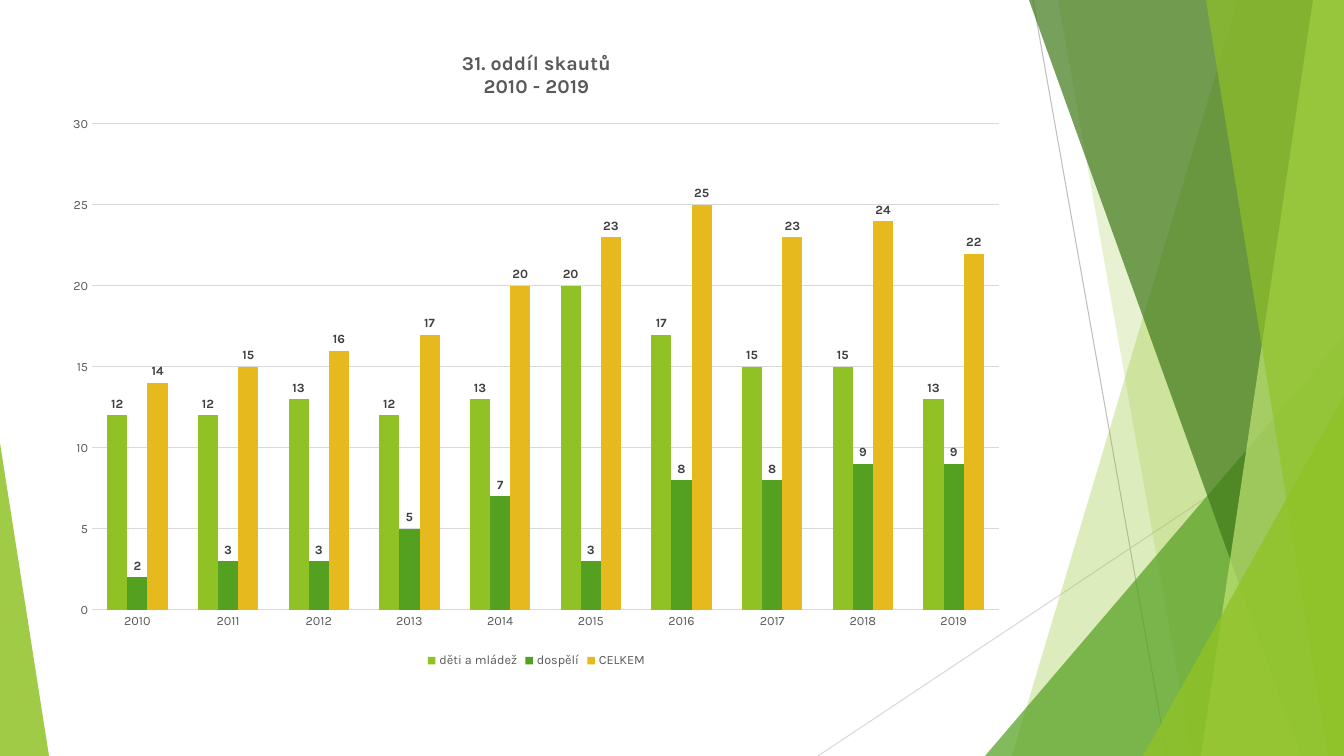
from dataclasses import dataclass

from lxml import etree
from pptx import Presentation
from pptx.chart.data import CategoryChartData
from pptx.dml.color import RGBColor
from pptx.enum.chart import (XL_CHART_TYPE, XL_LABEL_POSITION,
                             XL_LEGEND_POSITION, XL_TICK_MARK)
from pptx.enum.shapes import MSO_CONNECTOR, MSO_SHAPE
from pptx.oxml import parse_xml
from pptx.oxml.ns import qn
from pptx.util import Pt

COLUMNS = XL_CHART_TYPE.COLUMN_CLUSTERED
OUTSIDE = XL_LABEL_POSITION.OUTSIDE_END
BOTTOM = XL_LEGEND_POSITION.BOTTOM
NO_TICK = XL_TICK_MARK.NONE
STRAIGHT = MSO_CONNECTOR.STRAIGHT
TRIANGLE = MSO_SHAPE.ISOSCELES_TRIANGLE
CHART_NS = "http://schemas.openxmlformats.org/drawingml/2006/chart"
SCALE = 914400 / 100.8


@dataclass(frozen=True)
class Theme:
    font: str = "Karla"
    lime: str = "90C226"
    green: str = "54A021"
    forest: str = "3F7819"
    pale: str = "C0E474"
    gold: str = "E6B91E"
    grid: str = "D9D9D9"
    line: str = "BFBFBF"
    text: str = "595959"
    label: str = "404040"
    title_size: int = 14
    small_size: int = 9
    thin: float = 0.75


THEME = Theme()

YEARS = [str(year) for year in range(2010, 2020)]
SERIES = [
    ("děti a mládež", THEME.lime, [12, 12, 13, 12, 13, 20, 17, 15, 15, 13]),
    ("dospělí", THEME.green, [2, 3, 3, 5, 7, 3, 8, 8, 9, 9]),
    ("CELKEM", THEME.gold, [14, 15, 16, 17, 20, 23, 25, 23, 24, 22]),
]
TITLE = ["31. oddíl skautů", "2010 - 2019"]


def px(count):
    return round(count * SCALE)


def rgb(code):
    return RGBColor.from_string(code)


def style(font, size, color, bold=False):
    font.name = THEME.font
    font.size = Pt(size)
    font.bold = bold
    font.color.rgb = rgb(color)


def tint(shape, color, alpha):
    """Fill a shape with a see-through colour, no outline or shadow."""
    shape.shadow.inherit = False
    shape.line.fill.background()
    shape.fill.solid()
    shape.fill.fore_color.rgb = rgb(color)
    code = shape.fill._xPr.find(".//" + qn("a:srgbClr"))
    etree.SubElement(code, qn("a:alpha")).set("val", str(alpha * 1000))


def add_line(slide, start, end, color):
    line = slide.shapes.add_connector(STRAIGHT, *map(px, start + end))
    line.line.color.rgb = rgb(color)
    line.line.width = Pt(THEME.thin)
    etree.SubElement(line._element.spPr, qn("a:effectLst"))


def add_band(slide, box, top, foot, color, alpha):
    """A band from a slanted left edge to the right side of the box."""
    left, head, width, height = box
    right, base = left + width, head + height
    points = [(right, head), (right, base), (left + foot, base)]
    pen = slide.shapes.build_freeform(left + top, head, SCALE)
    pen.add_line_segments(points, close=True)
    tint(pen.convert_to_shape(), color, alpha)


def add_wedge(slide, box, peak, color, alpha):
    wedge = slide.shapes.add_shape(TRIANGLE, *map(px, box))
    wedge.adjustments[0] = peak
    tint(wedge, color, alpha)


def draw_right(slide, box):
    """Overlapping facets on the right side."""
    left, top, width, height = box
    right, base = left + width, top + height

    def corner(wide, tall):
        return right - wide, base - tall, wide, tall

    add_line(slide, (left + 213, top), (left + 347, base), THEME.line)
    add_line(slide, (right, top + 406), (left - 2, base), THEME.grid)
    add_band(slide, box, 418, 192, THEME.lime, 30)
    add_band(slide, box, 238, 372, THEME.lime, 20)
    add_wedge(slide, corner(359, 420), 1, THEME.green, 72)
    add_band(slide, box, 209, 481, THEME.forest, 70)
    add_band(slide, box, 493, 381, THEME.pale, 70)
    add_band(slide, box, 386, 508, THEME.lime, 65)
    add_wedge(slide, corner(201, 360), 1, THEME.lime, 80)


def set_plot(chart, box, plot):
    """Fix the inner plot area, given in px within the chart box."""
    width, height = box[2:]
    left, top, wide, tall = plot
    parts = {"x": left / width, "y": top / height,
             "w": wide / width, "h": tall / height}
    modes = "".join(f'<c:{key}Mode val="edge"/>' for key in "xy")
    sizes = "".join(f'<c:{key} val="{part:.4f}"/>'
                    for key, part in parts.items())
    layout = parse_xml(
        f'<c:layout xmlns:c="{CHART_NS}"><c:manualLayout>'
        f'<c:layoutTarget val="inner"/>{modes}{sizes}'
        '</c:manualLayout></c:layout>')
    area = chart._chartSpace.find(".//" + qn("c:plotArea"))
    for old in area.findall(qn("c:layout")):
        area.remove(old)
    area.insert(0, layout)


def draw_title(chart):
    chart.has_title = True
    frame = chart.chart_title.text_frame
    chart.chart_title.include_in_layout = False
    for index, text in enumerate(TITLE):
        para = frame.add_paragraph() if index else frame.paragraphs[0]
        para.text = text
        style(para.font, THEME.title_size, THEME.text, bold=True)


def draw_axes(chart):
    for axis in (chart.category_axis, chart.value_axis):
        axis.major_tick_mark = axis.minor_tick_mark = NO_TICK
        axis.format.line.fill.background()
        style(axis.tick_labels.font, THEME.small_size, THEME.text)
    values = chart.value_axis
    values.minimum_scale, values.maximum_scale = 0, 30
    values.major_unit = 5
    grid = values.major_gridlines.format.line
    grid.color.rgb = rgb(THEME.grid)
    grid.width = Pt(THEME.thin)


def draw_chart(slide, box):
    """Member counts by year."""
    data = CategoryChartData()
    data.categories = YEARS
    for name, _, counts in SERIES:
        data.add_series(name, counts)
    chart = slide.shapes.add_chart(COLUMNS, *map(px, box), data).chart
    style(chart.font, THEME.small_size, THEME.text)
    draw_title(chart)
    draw_axes(chart)
    set_plot(chart, box, (38, 95, 907, 486))

    # Legend
    chart.has_legend = True
    chart.legend.position = BOTTOM
    chart.legend.include_in_layout = False
    style(chart.legend.font, THEME.small_size, THEME.text)

    # Columns and their labels
    plot = chart.plots[0]
    plot.gap_width, plot.overlap = 150, 0
    plot.vary_by_categories = False
    for series, (_, color, _) in zip(plot.series, SERIES):
        series.format.fill.solid()
        series.format.fill.fore_color.rgb = rgb(color)
        labels = series.data_labels
        labels.show_value = True
        labels.position = OUTSIDE
        style(labels.font, THEME.small_size, THEME.label, bold=True)


def main():
    deck = Presentation()
    deck.slide_width, deck.slide_height = px(1344), px(756)
    slide = deck.slides.add_slide(deck.slide_layouts[6])
    draw_right(slide, (820, 0, 524, 756))
    add_wedge(slide, (0, 443, 49, 313), 0, THEME.lime, 85)
    draw_chart(slide, (54, 29, 965, 643))
    deck.save("out.pptx")


if __name__ == "__main__":
    main()
